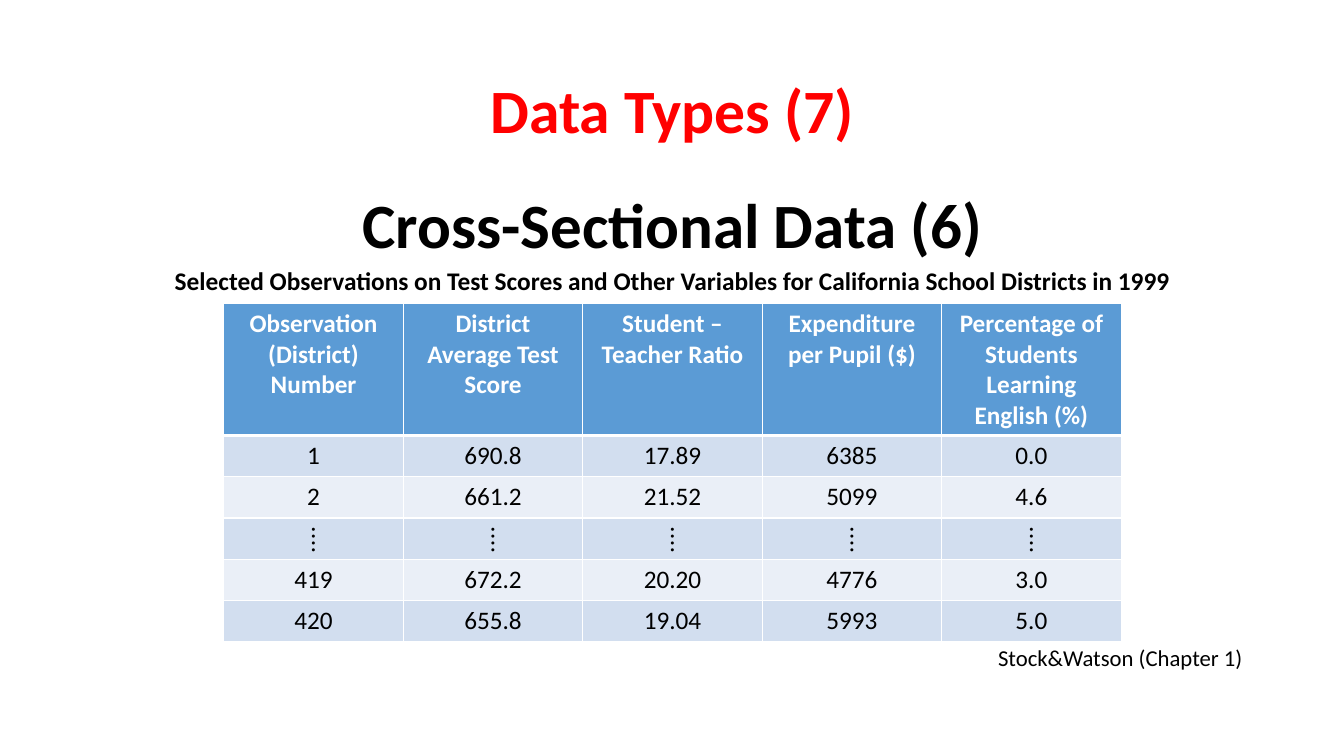
from lxml import etree
from pptx import Presentation
from pptx.dml.color import RGBColor
from pptx.enum.text import MSO_ANCHOR, PP_ALIGN
from pptx.oxml.ns import qn
from pptx.util import Inches, Pt

CENTER, RIGHT = PP_ALIGN.CENTER, PP_ALIGN.RIGHT
TOP, MIDDLE = MSO_ANCHOR.TOP, MSO_ANCHOR.MIDDLE

RED = RGBColor(0xFF, 0x00, 0x00)
BLACK = RGBColor(0x00, 0x00, 0x00)
WHITE = RGBColor(0xFF, 0xFF, 0xFF)
BLUE = RGBColor(0x5B, 0x9B, 0xD5)
BANDS = (RGBColor(0xD2, 0xDE, 0xEF), RGBColor(0xEA, 0xEF, 0xF7))

FONT = "Calibri"
LEFT, WIDTH = 0.92, 11.5
COL_W, HEAD_H, ROW_H = 1.78, 1.31, 0.41

ROWS = [
    ("Observation (District) Number", "District Average Test Score",
     "Student – Teacher Ratio", "Expenditure per Pupil ($)",
     "Percentage of Students Learning English (%)"),
    ("1", "690.8", "17.89", "6385", "0.0"),
    ("2", "661.2", "21.52", "5099", "4.6"),
    ("⁞",) * 5,
    ("419", "672.2", "20.20", "4776", "3.0"),
    ("420", "655.8", "19.04", "5993", "5.0"),
]


def write(para, text, size=18, color=BLACK, bold=False, align=CENTER,
          line=None, before=None):
    """Fill a paragraph with one formatted run."""
    para.alignment = align
    if line:
        para.line_spacing = line
    if before:
        para.space_before = Pt(before)
    run = para.add_run()
    run.text = text
    font = run.font
    font.name, font.size, font.bold = FONT, Pt(size), bold
    font.color.rgb = color


def add_box(slide, top, height, anchor=MIDDLE):
    """Add a full-width text box and return its frame."""
    box = slide.shapes.add_textbox(
        Inches(LEFT), Inches(top), Inches(WIDTH), Inches(height))
    frame = box.text_frame
    frame.word_wrap = True
    frame.vertical_anchor = anchor
    return frame


def set_edges(cell, below):
    """Draw white cell borders; below is the bottom width in points."""
    props = cell._tc.get_or_add_tcPr()
    edges = (("L", 1), ("R", 1), ("T", 1), ("B", below))
    for spot, (side, width) in enumerate(edges):
        edge = etree.Element(qn(f"a:ln{side}"), w=str(Pt(width)))
        fill = etree.SubElement(edge, qn("a:solidFill"))
        etree.SubElement(fill, qn("a:srgbClr"), val=str(WHITE))
        props.insert(spot, edge)


def add_grid(slide, left, top):
    """Add the table with a blue header and banded rows."""
    count = len(ROWS[0])
    height = HEAD_H + ROW_H * (len(ROWS) - 1)
    table = slide.shapes.add_table(
        len(ROWS), count, Inches(left), Inches(top),
        Inches(COL_W * count), Inches(height)).table
    for col in table.columns:
        col.width = Inches(COL_W)
    for r, values in enumerate(ROWS):
        head = r == 0
        table.rows[r].height = Inches(HEAD_H if head else ROW_H)
        for c, value in enumerate(values):
            cell = table.cell(r, c)
            cell.fill.solid()
            cell.fill.fore_color.rgb = BLUE if head else BANDS[(r - 1) % 2]
            set_edges(cell, 3 if head else 1)
            if r == 1:  # shares the thick rule under the header
                cell._tc.tcPr.find(qn("a:lnT")).set("w", str(Pt(3)))
            write(cell.text_frame.paragraphs[0], value,
                  color=WHITE if head else BLACK, bold=head)


def main():
    deck = Presentation()
    deck.slide_width, deck.slide_height = Inches(13.33), Inches(7.5)
    slide = deck.slides.add_slide(deck.slide_layouts[6])

    # Title
    title = add_box(slide, 0.4, 1.45)
    write(title.paragraphs[0], "Data Types (7)", size=44, color=RED,
          bold=True, line=0.9)

    # Heading and table caption
    body = add_box(slide, 2, 1, anchor=TOP)
    write(body.paragraphs[0], "Cross-Sectional Data (6)", size=45,
          bold=True, line=0.7, before=10)
    write(body.add_paragraph(),
          "Selected Observations on Test Scores and Other Variables "
          "for California School Districts in 1999",
          size=18.1, bold=True, line=0.7, before=10)

    # Data table
    add_grid(slide, 2.22, 3.01)

    # Source line
    source = add_box(slide, 6.35, 0.35)
    write(source.paragraphs[0], "Stock&Watson (Chapter 1)", size=16.2,
          align=RIGHT)

    deck.save("out.pptx")


if __name__ == "__main__":
    main()
